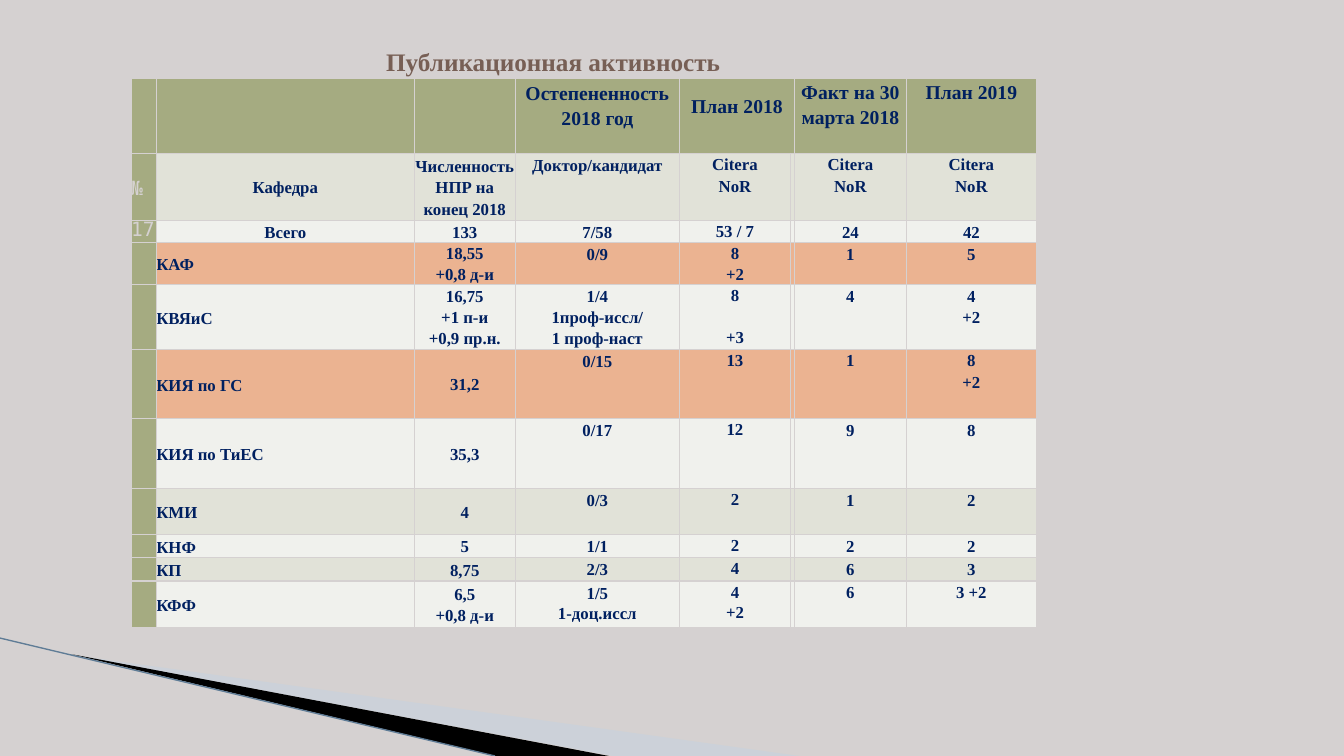
import dataclasses
import typing

import lxml.etree
import pptx
import pptx.dml.color
import pptx.enum.shapes
import pptx.enum.text
import pptx.oxml.ns
import pptx.util

RGB = pptx.dml.color.RGBColor
ALIGN = pptx.enum.text.PP_ALIGN
MID = pptx.enum.text.MSO_ANCHOR.MIDDLE
TOP = pptx.enum.text.MSO_ANCHOR.TOP

GREY = RGB(0xD5, 0xD1, 0xD1)
OLIVE = RGB(0xA5, 0xAB, 0x81)
SAGE = RGB(0xE1, 0xE2, 0xD8)
PALE = RGB(0xF0, 0xF1, 0xED)
PEACH = RGB(0xEB, 0xB3, 0x91)
NAVY = RGB(0x00, 0x20, 0x60)
BROWN = RGB(0x77, 0x5F, 0x55)
BLACK = RGB(0x00, 0x00, 0x00)
SKY = RGB(0xC0, 0xD3, 0xE6)
STEEL = RGB(0x5F, 0x7C, 0x96)

SERIF = "Times New Roman"
MONO = "DejaVu Sans Mono"
UNIT = pptx.util.Inches(0.01)
WIDE, HIGH = 1333, 750
EXACT = pptx.util.Pt(14.8)
INDEX = "Citera\nNoR"


@dataclasses.dataclass
class Col:
    """Width in grid units, with the look of the text in the column."""
    width: int
    gap: typing.Union[float, int] = 1.15
    anchor: typing.Any = TOP
    align: typing.Any = ALIGN.CENTER
    pad: int = 0


@dataclasses.dataclass
class Row:
    """Height in grid units, fill and texts of one table row."""
    height: int
    fill: RGB
    texts: list[str]


@dataclasses.dataclass
class Wedge:
    """Filled corner outline on the slide grid."""
    points: list[tuple[int, int]]
    fill: RGB
    alpha: int


COLS = [
    Col(25, 1.15, MID, ALIGN.LEFT),
    Col(256, 1.15, MID, ALIGN.LEFT),
    Col(100, EXACT, MID),
    Col(163, EXACT, pad=1),
    Col(110, EXACT),
    Col(4),
    Col(111),
    Col(129),
]

ROWS = [
    Row(74, OLIVE, ["", "", "", "Остепененность 2018 год", "План 2018", "",
                    "Факт на 30 марта 2018", "План 2019"]),
    Row(67, SAGE, ["№", "Кафедра", "Численность НПР на конец 2018",
                   "Доктор/кандидат", INDEX, "", INDEX, INDEX]),
    Row(21, PALE, ["17", "Всего", "133", "7/58", "53 / 7", "", "24", "42"]),
    Row(42, PEACH, ["", "КАФ", "18,55\n+0,8 д-и", "0/9", "8\n+2", "", "1", "5"]),
    Row(64, PALE, ["", "КВЯиС", "16,75\n+1 п-и\n+0,9 пр.н.",
                   "1/4\n1проф-иссл/\n1 проф-наст", "8\n+3", "", "4", "4\n+2"]),
    Row(69, PEACH, ["", "КИЯ по ГС", "31,2", "0/15", "13", "", "1", "8\n+2"]),
    Row(69, PALE, ["", "КИЯ по ТиЕС", "35,3", "0/17", "12", "", "9", "8"]),
    Row(46, SAGE, ["", "КМИ", "4", "0/3", "2", "", "1", "2"]),
    Row(23, PALE, ["", "КНФ", "5", "1/1", "2", "", "2", "2"]),
    Row(23, SAGE, ["", "КП", "8,75", "2/3", "4", "", "6", "3"]),
    Row(46, PALE, ["", "КФФ", "6,5\n+0,8 д-и", "1/5\n1-доц.иссл", "4\n+2", "",
                   "6", "3 +2"]),
]

WEDGES = [
    Wedge([(73, 650), (793, 750), (608, 750)], SKY, 40),
    Wedge([(71, 649), (604, 750), (492, 750)], BLACK, 100),
]


def add_tag(node: typing.Any, name: str, **attrs: str) -> typing.Any:
    """Append a drawing element to a node."""
    return lxml.etree.SubElement(node, pptx.oxml.ns.qn(name), attrs)


def set_font(para: typing.Any, size: int, color: RGB,
             face: str = SERIF, bold: bool = True) -> None:
    """Set the font of a paragraph."""
    font = para.font
    font.size, font.name, font.bold = pptx.util.Pt(size), face, bold
    font.color.rgb = color


def draw_wedge(slide: typing.Any, wedge: Wedge) -> None:
    """Draw one corner outline."""
    form = slide.shapes.build_freeform(*wedge.points[0], scale=UNIT)
    form.add_line_segments(wedge.points[1:])
    shape = form.convert_to_shape()
    shape.shadow.inherit = False
    shape.line.fill.background()
    shape.fill.solid()
    shape.fill.fore_color.rgb = wedge.fill
    if wedge.alpha < 100:
        tint = next(shape._element.spPr.iter(pptx.oxml.ns.qn("a:srgbClr")))
        add_tag(tint, "a:alpha", val=str(wedge.alpha * 1000))


def draw_edge(slide: typing.Any) -> None:
    """Draw the thin line along the corner."""
    line = slide.shapes.add_connector(
        pptx.enum.shapes.MSO_CONNECTOR.STRAIGHT,
        0, 633 * UNIT, 491 * UNIT, HIGH * UNIT)
    line.line.color.rgb = STEEL
    line.line.width = pptx.util.Pt(0.95)
    add_tag(line._element.spPr, "a:effectLst")


def set_sides(cell: typing.Any) -> None:
    """Give a cell its four borders."""
    props = cell._tc.get_or_add_tcPr()
    for place, side in enumerate("LRTB"):
        line = add_tag(props, f"a:ln{side}", w=str(pptx.util.Pt(1)))
        add_tag(add_tag(line, "a:solidFill"), "a:srgbClr", val=str(GREY))
        props.insert(place, line)


def fill_cell(cell: typing.Any, row: int, place: int) -> None:
    """Write and style one table cell."""
    col, text = COLS[place], ROWS[row].texts[place]
    cell.fill.solid()
    cell.fill.fore_color.rgb = ROWS[row].fill if place else OLIVE
    set_sides(cell)
    cell.margin_left = cell.margin_right = cell.margin_top = col.pad * UNIT
    cell.margin_bottom = 22 * UNIT if (row, place) == (0, 4) else 0
    cell.vertical_anchor = MID if (row, place) == (0, 4) else col.anchor
    cell.text_frame.text = text
    for para in cell.text_frame.paragraphs:
        para.alignment = ALIGN.CENTER if place == 1 and row < 3 else col.align
        para.line_spacing = col.gap if row > 1 else 1.15
        if para.text == "+3":
            para.space_before = EXACT
        if place == 0:
            set_font(para, 14, GREY, MONO, False)
        else:
            set_font(para, 12 if row else 14, NAVY)
        if not text:
            add_tag(para._p, "a:endParaRPr", sz="1000")
    if (row, place) == (2, 0):
        cell.vertical_anchor = TOP
        cell.text_frame.paragraphs[0].line_spacing = EXACT


def draw_table(slide: typing.Any) -> None:
    """Draw the table of departments."""
    wide, high = sum(c.width for c in COLS), sum(r.height for r in ROWS)
    table = slide.shapes.add_table(
        len(ROWS), len(COLS), 130 * UNIT, 78 * UNIT,
        wide * UNIT, high * UNIT).table
    for place, col in enumerate(COLS):
        table.columns[place].width = col.width * UNIT
    for place, row in enumerate(ROWS):
        table.rows[place].height = row.height * UNIT
        for rank in range(len(COLS)):
            fill_cell(table.cell(place, rank), place, rank)
    table.cell(0, 4).merge(table.cell(0, 5))


def draw_title(slide: typing.Any) -> None:
    """Draw the slide title."""
    box = slide.shapes.add_textbox(67 * UNIT, 34 * UNIT, 1200 * UNIT, 54 * UNIT)
    frame = box.text_frame
    frame.word_wrap = True
    frame.vertical_anchor = MID
    frame.margin_left = 316 * UNIT
    frame.text = "Публикационная активность"
    set_font(frame.paragraphs[0], 18, BROWN)


def main() -> None:
    """Build and save the slide."""
    deck = pptx.Presentation()
    deck.slide_width, deck.slide_height = WIDE * UNIT, HIGH * UNIT
    slide = deck.slides.add_slide(deck.slide_layouts[6])
    slide.background.fill.solid()
    slide.background.fill.fore_color.rgb = GREY
    for wedge in WEDGES:
        draw_wedge(slide, wedge)
    draw_edge(slide)
    draw_table(slide)
    draw_title(slide)
    deck.save("out.pptx")


if __name__ == "__main__":
    main()
